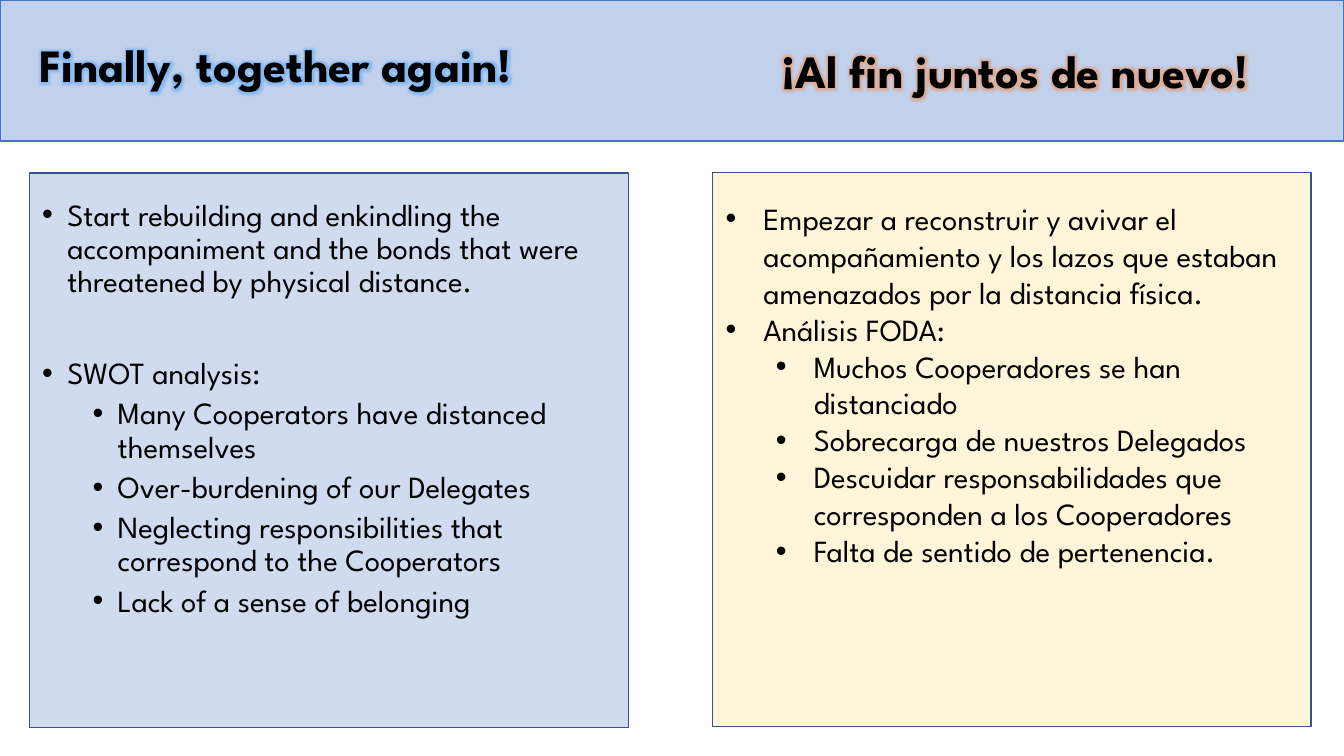
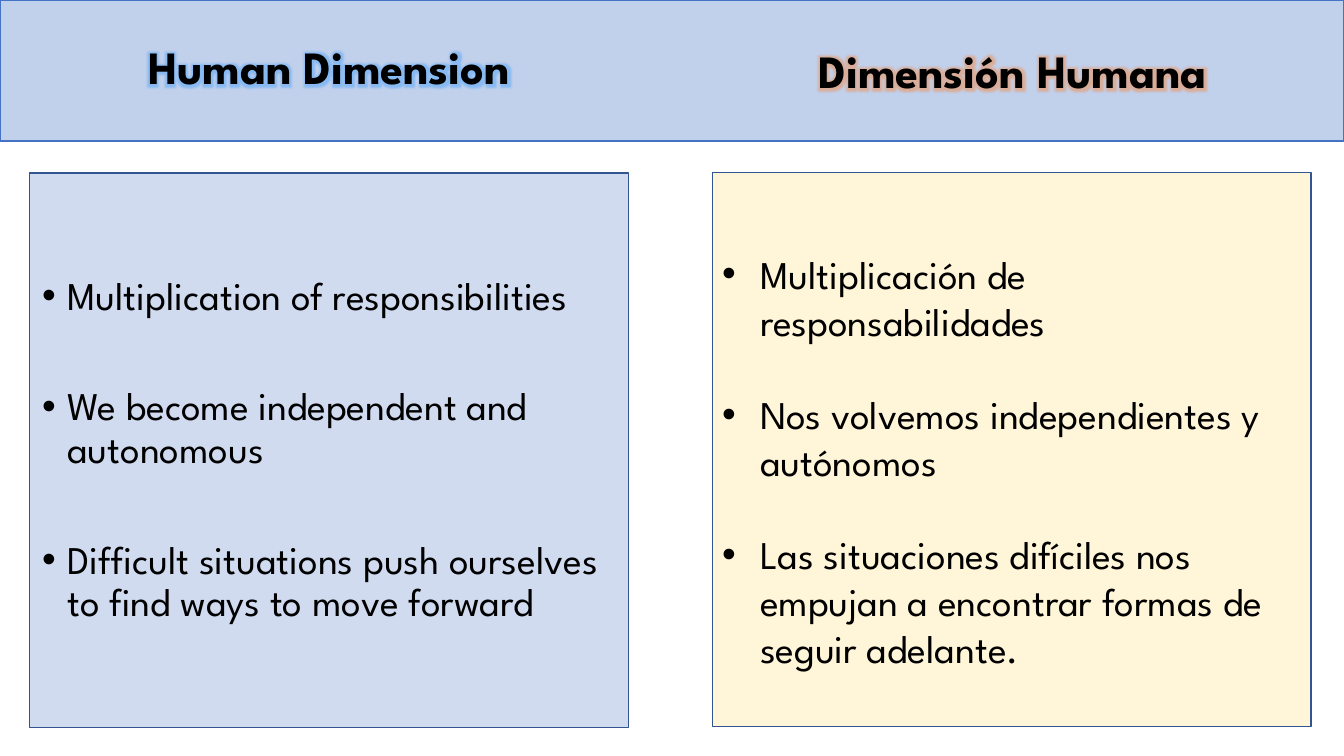
from lxml import etree
from pptx import Presentation
from pptx.dml.color import RGBColor
from pptx.enum.shapes import MSO_SHAPE
from pptx.enum.text import PP_ALIGN
from pptx.oxml.ns import qn
from pptx.util import Inches, Pt

RECTANGLE = MSO_SHAPE.RECTANGLE
LEFT, CENTER = PP_ALIGN.LEFT, PP_ALIGN.CENTER

BLUE = RGBColor(0x44, 0x72, 0xC4)
YELLOW = RGBColor(0xFF, 0xD9, 0x66)
PANEL_LINE = RGBColor(0x32, 0x54, 0x91)
BLACK = RGBColor(0x00, 0x00, 0x00)
BLUE_GLOW = RGBColor(0x31, 0x99, 0xFF)
ORANGE_GLOW = RGBColor(0xFF, 0x7A, 0x20)
FONT = "League Spartan"

prs = Presentation()
prs.slide_width, prs.slide_height = Inches(13.333), Inches(7.5)

# Grid of 100 columns by 100 rows
COL, ROW = prs.slide_width / 100, prs.slide_height / 100
BAND_ROWS = 18.67
PANEL_COLS, PANEL_ROWS = 44.55, 73.33
TITLE_COLS, TITLE_ROWS = 40.43, 8.8
TEXT_COLS = 44.4

# Shared by both slides: column, row, columns, rows, fill, opacity %, line
BLOCKS = [
    (53, 22.8, PANEL_COLS, PANEL_ROWS, YELLOW, 25, PANEL_LINE),
    (2.2, 22.9, PANEL_COLS, PANEL_ROWS, BLUE, 25, PANEL_LINE),
    (0, 0, 100, BAND_ROWS, BLUE, 33, BLUE),
]

# Per language: glow, indent, deeper indent, line spacing, space before per level
STYLES = [
    (BLUE_GLOW, 0.25, 0.75, 0.9, (10, 5)),
    (ORANGE_GLOW, 0.375, 0.875, 1.0, (0, 0)),
]

# Per slide: title alignment, text size, then English and Spanish as
# (title, its column and row), (text column and row), wider gap, items.
# An item is (level, whether the wider gap comes before it, wording).
SLIDES = [
    (LEFT, 22, [
        (("Finally, together again!", 2.18, 4.13), (2.4, 25.73), 42, [
            (0, False, "Start rebuilding and enkindling the accompaniment and the "
                       "bonds that were threatened by physical distance."),
            (0, True, "SWOT analysis:"),
            (1, False, "Many Cooperators have distanced themselves"),
            (1, False, "Over-burdening of our Delegates"),
            (1, False, "Neglecting responsibilities that correspond to the Cooperators"),
            (1, False, "Lack of a sense of belonging"),
        ]),
        (("¡Al fin juntos de nuevo!", 57.39, 4.93), (53.25, 25.73), 0, [
            (0, False, "Empezar a reconstruir y avivar el acompañamiento y los lazos "
                       "que estaban amenazados por la distancia física."),
            (0, False, "Análisis FODA:"),
            (1, False, "Muchos Cooperadores se han distanciado"),
            (1, False, "Sobrecarga de nuestros Delegados"),
            (1, False, "Descuidar responsabilidades que corresponden a los Cooperadores"),
            (1, False, "Falta de sentido de pertenencia."),
        ]),
    ]),
    (CENTER, 28, [
        (("Human Dimension", 4.28, 4.4), (2.4, 35.87), 49, [
            (0, False, "Multiplication of responsibilities"),
            (0, True, "We become independent and autonomous"),
            (0, True, "Difficult situations push ourselves to find ways to move forward"),
        ]),
        (("Dimensión Humana", 55.14, 4.93), (53, 32.4), 33, [
            (0, False, "Multiplicación de responsabilidades"),
            (0, True, "Nos volvemos independientes y autónomos"),
            (0, True, "Las situaciones difíciles nos empujan a encontrar formas de "
                      "seguir adelante."),
        ]),
    ]),
]


def place(col, row, cols, rows):
    """Turn grid units into left, top, width and height."""
    return int(col * COL), int(row * ROW), int(cols * COL), int(rows * ROW)


def add_paragraph(frame, index, wording, size):
    """Fill the first paragraph of a frame, or append another one."""
    paragraph = frame.add_paragraph() if index else frame.paragraphs[0]
    paragraph.text = wording
    paragraph.font.name, paragraph.font.size = FONT, Pt(size)
    paragraph.font.color.rgb = BLACK
    return paragraph


for title_align, text_size, languages in SLIDES:
    slide = prs.slides.add_slide(prs.slide_layouts[6])

    # Panels and title band
    for col, row, cols, rows, fill, opacity, line in BLOCKS:
        block = slide.shapes.add_shape(RECTANGLE, *place(col, row, cols, rows))
        block.shadow.inherit = False
        block.fill.solid()
        block.fill.fore_color.rgb = fill
        block.line.color.rgb = line
        block.line.width = Pt(1)
        fill_color = block._element.spPr.find(qn("a:solidFill"))[0]
        etree.SubElement(fill_color, qn("a:alpha"), val=str(opacity * 1000))

    for style, language in zip(STYLES, languages):
        glow_color, indent, deep_indent, line_spacing, spaces = style
        (title, title_col, title_row), (text_col, text_row), gap, items = language

        # Glowing title
        heading = slide.shapes.add_textbox(
            *place(title_col, title_row, TITLE_COLS, TITLE_ROWS)).text_frame
        heading.word_wrap = True
        paragraph = add_paragraph(heading, 0, title, 33)
        paragraph.alignment = title_align
        paragraph.font.bold = True
        run_props = paragraph.runs[0]._r.get_or_add_rPr()
        effects = etree.SubElement(run_props, qn("a:effectLst"))
        glow = etree.SubElement(effects, qn("a:glow"), rad=str(Pt(8)))
        color = etree.SubElement(glow, qn("a:srgbClr"), val=str(glow_color))
        etree.SubElement(color, qn("a:alpha"), val="40000")

        # Bulleted text
        body = slide.shapes.add_textbox(
            *place(text_col, text_row, TEXT_COLS, 96 - text_row)).text_frame
        body.word_wrap = True
        for index, (level, wide_gap, wording) in enumerate(items):
            paragraph = add_paragraph(body, index, wording, text_size)
            paragraph.level = level
            paragraph.line_spacing = line_spacing
            paragraph.space_before = Pt(gap if wide_gap else spaces[level])
            props = paragraph._p.get_or_add_pPr()
            props.set("marL", str(Inches(deep_indent if level else indent)))
            props.set("indent", str(-Inches(indent)))
            bullet_font = etree.Element(qn("a:buFont"), typeface="Arial")
            bullet = etree.Element(qn("a:buChar"), char="•")
            props.find(qn("a:spcBef")).addnext(bullet_font)
            bullet_font.addnext(bullet)

prs.save("out.pptx")
